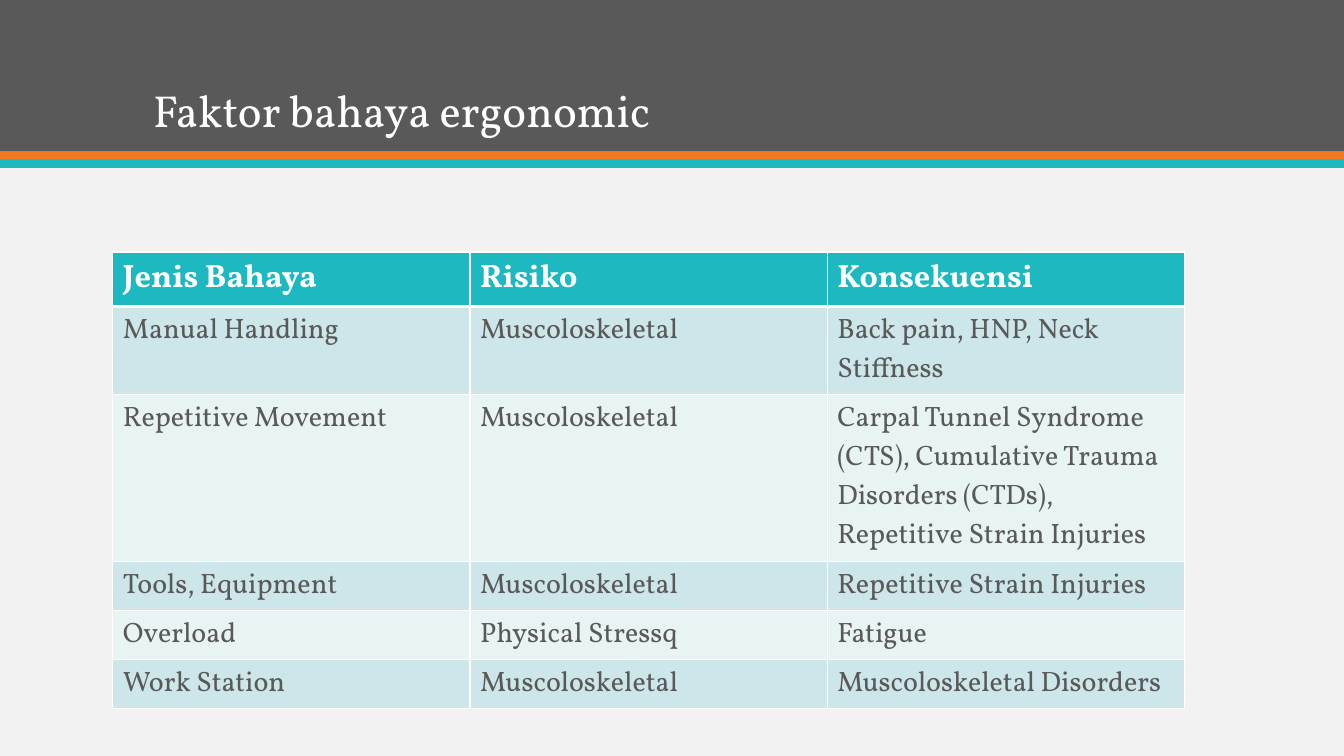
from lxml.etree import SubElement
from pptx import Presentation
from pptx.dml.color import RGBColor
from pptx.enum.shapes import MSO_SHAPE
from pptx.enum.text import MSO_ANCHOR
from pptx.oxml.ns import qn
from pptx.util import Pt

FONT = "Vollkorn"
WHITE = RGBColor(0xFF, 0xFF, 0xFF)
PALE_GREY = RGBColor(0xF2, 0xF2, 0xF2)
DARK_GREY = RGBColor(0x59, 0x59, 0x59)
ORANGE = RGBColor(0xEF, 0x79, 0x20)
TEAL = RGBColor(0x1E, 0xB8, 0xC1)
ROW_TINTS = (RGBColor(0xCD, 0xE6, 0xE9), RGBColor(0xE8, 0xF3, 0xF4))

SLIDE_WIDTH = 960
BANDS = ((0, 108, DARK_GREY), (108, 6.25, ORANGE), (113.75, 6.25, TEAL))
HAZARDS = (
    ("Jenis Bahaya", "Risiko", "Konsekuensi"),
    ("Manual Handling", "Muscoloskeletal", "Back pain, HNP, Neck Stiffness"),
    ("Repetitive Movement", "Muscoloskeletal",
     "Carpal Tunnel Syndrome (CTS), Cumulative Trauma Disorders (CTDs), "
     "Repetitive Strain Injuries"),
    ("Tools, Equipment", "Muscoloskeletal", "Repetitive Strain Injuries"),
    ("Overload", "Physical Stressq", "Fatigue"),
    ("Work Station", "Muscoloskeletal", "Muscoloskeletal Disorders"),
)
ROW_HEIGHTS = (39, 63, 119, 35, 35, 35)
COLUMN_WIDTH = 255.12


def set_font(paragraph, size, color, bold=False):
    """Style a whole paragraph."""
    font = paragraph.font
    font.name, font.size, font.bold = FONT, Pt(size), bold
    font.color.rgb = color


def add_band(slide, top, height, color):
    """Add a full-width colour band."""
    band = slide.shapes.add_shape(
        MSO_SHAPE.RECTANGLE, 0, Pt(top), Pt(SLIDE_WIDTH), Pt(height))
    band.shadow.inherit = False
    band.fill.solid()
    band.fill.fore_color.rgb = color
    band.line.fill.background()


def add_title(slide, text):
    """Add the slide title, resting on the bottom of the header."""
    title = slide.shapes.add_textbox(Pt(102.24), Pt(20.16), Pt(756), Pt(81.36))
    frame = title.text_frame
    frame.word_wrap = True
    frame.vertical_anchor = MSO_ANCHOR.BOTTOM
    heading = frame.paragraphs[0]
    heading.text = text
    heading.line_spacing = 0.9
    set_font(heading, 32, WHITE)


def set_borders(cell, widths):
    """Draw white cell borders, given widths by side tag."""
    properties = cell._tc.get_or_add_tcPr()
    for position, (side, width) in enumerate(widths.items()):
        border = SubElement(properties, qn(f"a:{side}"), w=str(Pt(width)))
        fill = SubElement(border, qn("a:solidFill"))
        SubElement(fill, qn("a:srgbClr"), val=str(WHITE))
        properties.insert(position, border)


def fill_cell(cell, text, row):
    """Write and style one cell according to its row."""
    is_header = row == 0
    cell.text = text
    cell.fill.solid()
    cell.fill.fore_color.rgb = TEAL if is_header else ROW_TINTS[(row - 1) % 2]
    set_font(cell.text_frame.paragraphs[0], 23 if is_header else 20,
             WHITE if is_header else DARK_GREY, is_header)
    set_borders(cell, {"lnL": 1, "lnR": 1, "lnT": 3 if row == 1 else 1,
                       "lnB": 3 if is_header else 1})


def add_hazard_table(slide):
    """Add the table of hazards, risks and consequences."""
    table = slide.shapes.add_table(
        len(HAZARDS), len(HAZARDS[0]), Pt(80.64), Pt(180),
        Pt(COLUMN_WIDTH * len(HAZARDS[0])), Pt(sum(ROW_HEIGHTS))).table
    for column in table.columns:
        column.width = Pt(COLUMN_WIDTH)
    for row, (texts, height) in enumerate(zip(HAZARDS, ROW_HEIGHTS)):
        table.rows[row].height = Pt(height)
        for column, text in enumerate(texts):
            fill_cell(table.cell(row, column), text, row)


def main():
    """Build and save the slide."""
    presentation = Presentation()
    presentation.slide_width = Pt(SLIDE_WIDTH)
    presentation.slide_height = Pt(540)
    slide = presentation.slides.add_slide(presentation.slide_layouts[6])
    slide.background.fill.solid()
    slide.background.fill.fore_color.rgb = PALE_GREY
    for top, height, color in BANDS:
        add_band(slide, top, height, color)
    add_title(slide, "Faktor bahaya ergonomic")
    add_hazard_table(slide)
    presentation.save("out.pptx")


if __name__ == "__main__":
    main()
